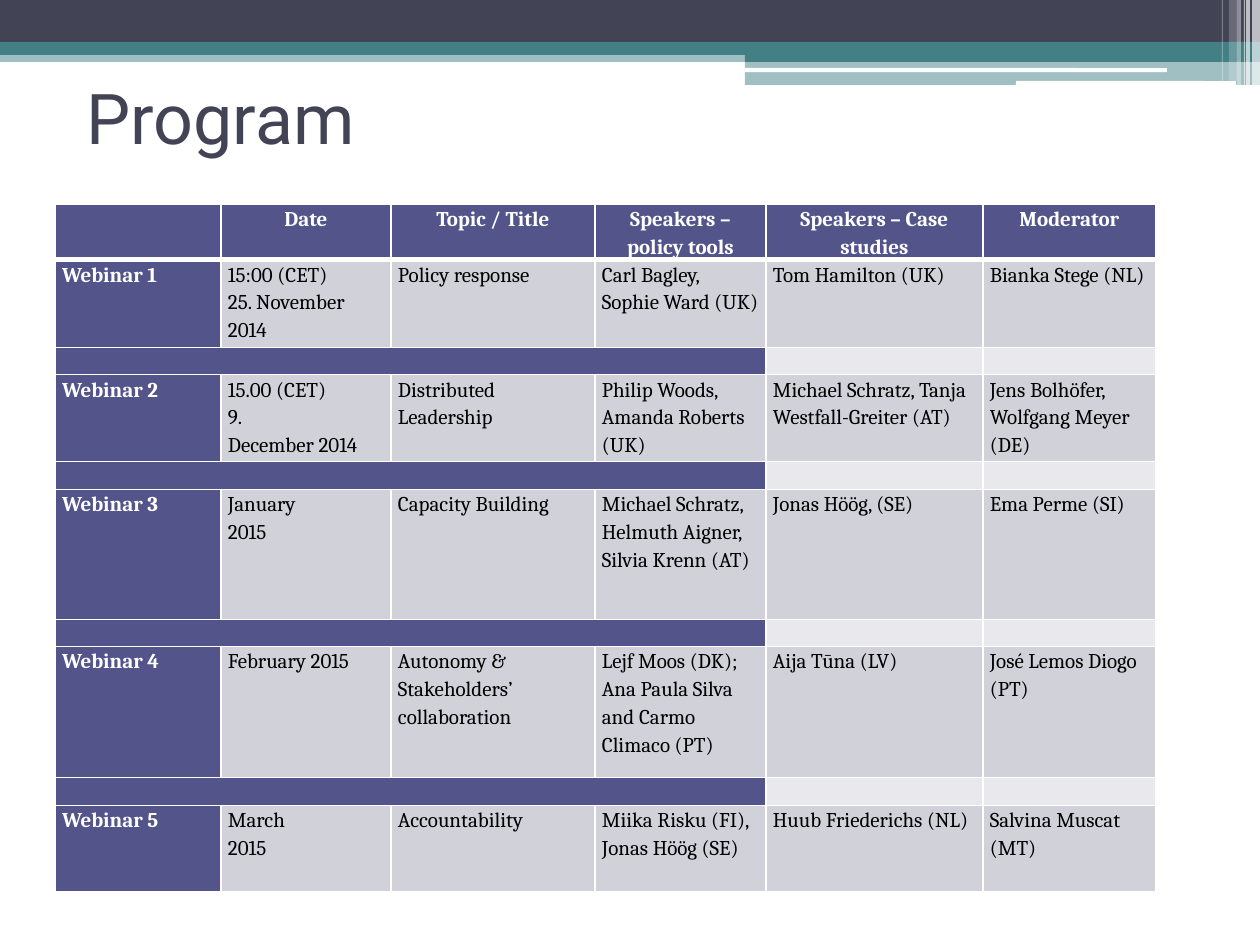
from lxml.etree import SubElement
from pptx import Presentation
from pptx.dml.color import RGBColor
from pptx.enum.shapes import MSO_SHAPE
from pptx.enum.text import MSO_ANCHOR, PP_ALIGN
from pptx.oxml.ns import qn
from pptx.util import Emu, Pt

EMU_PER_PX = 914400 / 126

WHITE = RGBColor(0xFF, 0xFF, 0xFF)
BLACK = RGBColor(0x00, 0x00, 0x00)
SLATE = RGBColor(0x42, 0x44, 0x56)
TEAL = RGBColor(0x43, 0x80, 0x86)
INDIGO = RGBColor(0x53, 0x54, 0x8A)
LIGHT_GRAY = RGBColor(0xD1, 0xD1, 0xDA)
PALE_GRAY = RGBColor(0xE9, 0xE9, 0xED)

BANDS = [
    (0, 50, 1260, 12, TEAL, 50),
    (0, 0, 1260, 42, SLATE, 100),
    (0, 42, 1260, 13, TEAL, 100),
    (745, 49, 515, 13, TEAL, 100),
    (745, 62, 515, 23, TEAL, 50),
]
HIGHLIGHTS = [(745, 68, 422, 4), (1016, 81, 220, 5)]
STRIPES = [
    (1252, 8, 85, 65),
    (1246, 4, 85, 65),
    (1244, 1, 85, 60),
    (1237, 4, 85, 40),
    (1229, 8, 81, 20),
    (1222, 1, 81, 30),
]

COLUMN_WIDTHS = [166, 170, 204, 171, 217, 173]
ROW_HEIGHTS = [54, 88, 27, 87, 28, 130, 27, 131, 28, 86]
HEADER = ["", "Date", "Topic / Title", "Speakers – policy tools",
          "Speakers – Case studies", "Moderator"]
WEBINARS = [
    ["Webinar 1", "15:00 (CET)\n25. November 2014", "Policy response",
     "Carl Bagley, Sophie Ward (UK)", "Tom Hamilton (UK)", "Bianka Stege (NL)"],
    ["Webinar 2", "15.00 (CET)\n9.\nDecember 2014", "Distributed Leadership",
     "Philip Woods, Amanda Roberts (UK)",
     "Michael Schratz, Tanja Westfall-Greiter (AT)",
     "Jens Bolhöfer, Wolfgang Meyer (DE)"],
    ["Webinar 3", "January\n2015", "Capacity Building",
     "Michael Schratz, Helmuth Aigner,\nSilvia Krenn (AT)",
     "Jonas Höög, (SE)", "Ema Perme (SI)"],
    ["Webinar 4", "February 2015", "Autonomy & Stakeholders’ collaboration",
     "Lejf Moos (DK);\nAna Paula Silva and Carmo Climaco (PT)",
     "Aija Tūna (LV)", "José Lemos Diogo (PT)"],
    ["Webinar 5", "March\n2015", "Accountability",
     "Miika Risku (FI),\nJonas Höög (SE)", "Huub Friederichs (NL)",
     "Salvina Muscat (MT)"],
]


def px(length):
    return Emu(round(length * EMU_PER_PX))


class SlideBuilder:
    title_font = "Roboto"
    body_font = "Cambria"
    title_size = 40
    body_size = 12
    line_spacing = 1.15

    def __init__(self, slide):
        self.slide = slide

    def bar(self, left, top, width, height, color, opacity=100, kind=MSO_SHAPE.RECTANGLE):
        shape = self.slide.shapes.add_shape(kind, px(left), px(top), px(width), px(height))
        shape.shadow.inherit = False
        shape.line.fill.background()
        shape.fill.solid()
        shape.fill.fore_color.rgb = color
        if opacity < 100:
            color_element = shape.fill._xPr.find(".//" + qn("a:srgbClr"))
            SubElement(color_element, qn("a:alpha"), val=str(opacity * 1000))

    def title(self, text, left, top, width, height):
        shape = self.slide.shapes.title
        self.slide.shapes._spTree.append(shape._element)
        shape.left, shape.top = px(left), px(top)
        shape.width, shape.height = px(width), px(height)
        frame = shape.text_frame
        frame.text = text
        frame.vertical_anchor = MSO_ANCHOR.MIDDLE
        paragraph = frame.paragraphs[0]
        paragraph.alignment = PP_ALIGN.LEFT
        self.style_font(paragraph.runs[0].font, self.title_font, self.title_size, SLATE)

    def style_font(self, font, name, size, color, bold=False):
        font.name, font.size, font.bold = name, Pt(size), bold
        font.color.rgb = color

    def borders(self, cell, top, bottom):
        properties = cell._tc.get_or_add_tcPr()
        for side, points in (("L", 1), ("R", 1), ("T", top), ("B", bottom)):
            line = SubElement(properties, qn("a:ln" + side), w=str(Pt(points)))
            fill = SubElement(line, qn("a:solidFill"))
            SubElement(fill, qn("a:srgbClr"), val=str(WHITE))

    def cell(self, cell, text, fill, color, bold=False, alignment=PP_ALIGN.LEFT):
        cell.margin_left = cell.margin_right = px(7)
        cell.margin_top = cell.margin_bottom = 0
        cell.fill.solid()
        cell.fill.fore_color.rgb = fill
        cell.text_frame.text = text
        for paragraph in cell.text_frame.paragraphs:
            paragraph.alignment = alignment
            paragraph.line_spacing = self.line_spacing
            for run in paragraph.runs:
                self.style_font(run.font, self.body_font, self.body_size, color, bold)
            if not paragraph.runs:
                SubElement(paragraph._p, qn("a:endParaRPr"), sz="1000")

    def table(self, left, top, header, records, widths, heights):
        frame = self.slide.shapes.add_table(
            len(heights), len(widths), px(left), px(top), px(sum(widths)), px(sum(heights)))
        table = frame.table
        for column, width in zip(table.columns, widths):
            column.width = px(width)
        for row, height in zip(table.rows, heights):
            row.height = px(height)
        for row_index, row in enumerate(table.rows):
            is_header = row_index == 0
            is_spacer = not is_header and row_index % 2 == 0
            if is_header:
                texts = header
            elif is_spacer:
                texts = [""] * len(widths)
            else:
                texts = records[row_index // 2]
            for column_index, (cell, text) in enumerate(zip(row.cells, texts)):
                self.borders(cell, 3 if row_index == 1 else 1, 3 if is_header else 1)
                if is_header:
                    self.cell(cell, text, INDIGO, WHITE, True, PP_ALIGN.CENTER)
                elif column_index == 0 or is_spacer and column_index < 4:
                    self.cell(cell, text, INDIGO, WHITE, True)
                else:
                    self.cell(cell, text, PALE_GRAY if is_spacer else LIGHT_GRAY, BLACK)
            if is_spacer:
                table.cell(row_index, 0).merge(table.cell(row_index, 3))


def main():
    presentation = Presentation()
    presentation.slide_width, presentation.slide_height = px(1260), px(945)
    builder = SlideBuilder(presentation.slides.add_slide(presentation.slide_layouts[5]))
    for band in BANDS:
        builder.bar(*band)
    for highlight in HIGHLIGHTS:
        builder.bar(*highlight, WHITE, kind=MSO_SHAPE.ROUNDED_RECTANGLE)
    for left, width, height, opacity in STRIPES:
        builder.bar(left, 0, width, height, WHITE, opacity)
    builder.title("Program", 74, 37, 1134, 158)
    builder.table(55, 204, HEADER, WEBINARS, COLUMN_WIDTHS, ROW_HEIGHTS)
    presentation.save("out.pptx")


if __name__ == "__main__":
    main()
